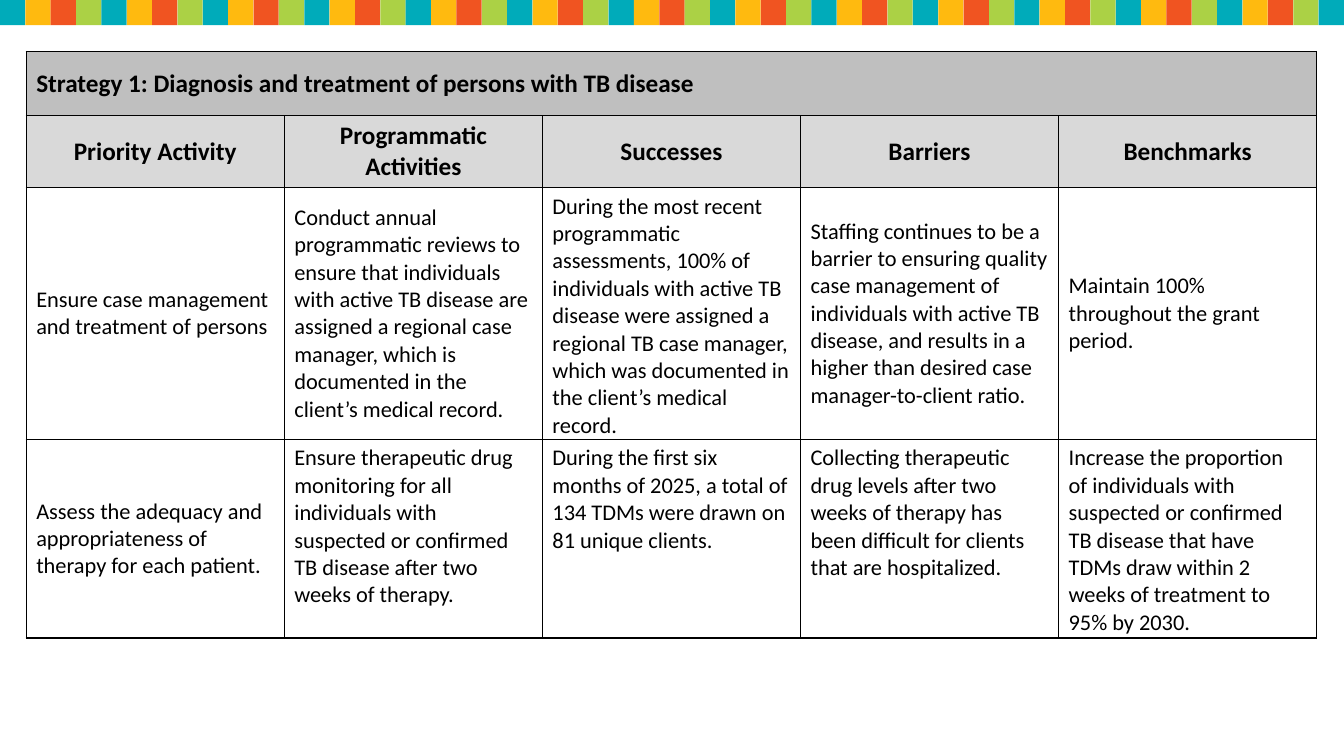
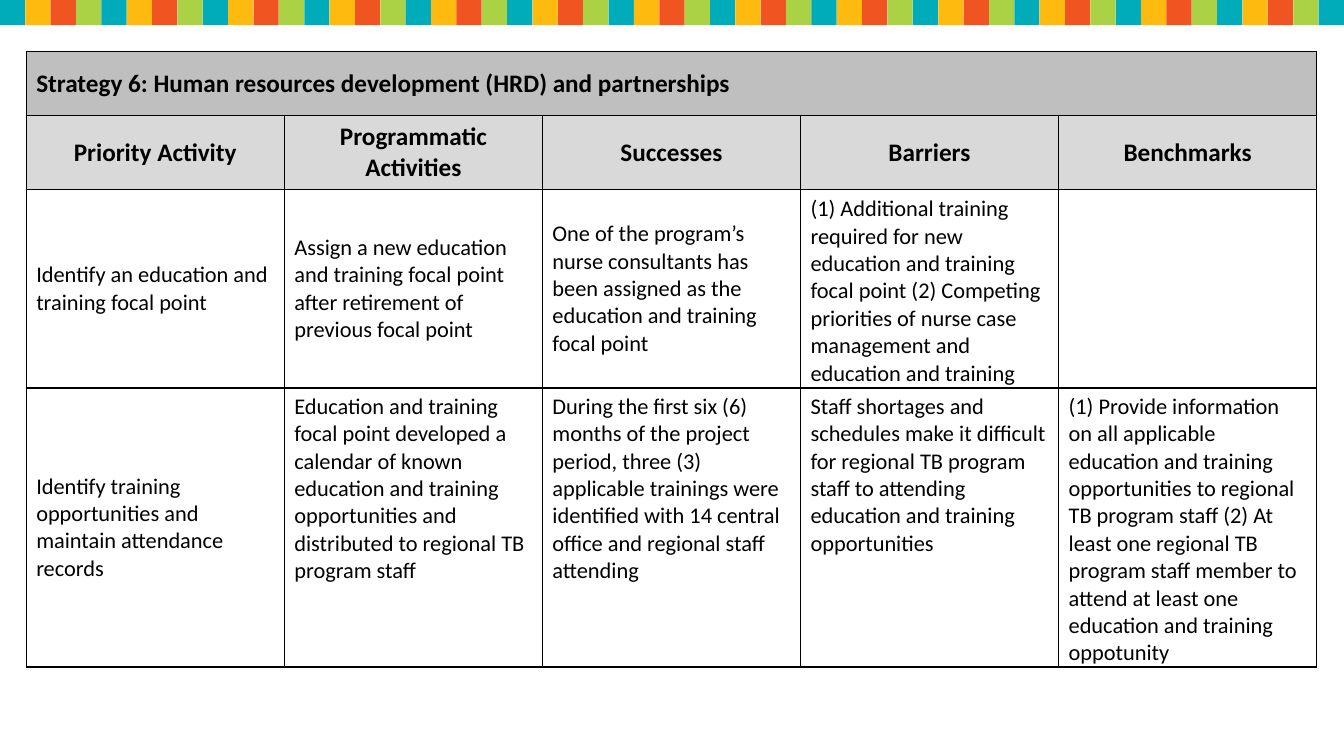
"""Build two TB strategy table slides under a shared coloured band."""
from itertools import cycle, islice

from lxml.etree import SubElement
from pptx import Presentation
from pptx.dml.color import RGBColor
from pptx.enum.shapes import MSO_SHAPE
from pptx.enum.text import MSO_ANCHOR, PP_ALIGN
from pptx.oxml.ns import qn
from pptx.util import Inches, Pt

COLORS = {
    "teal": "00ABBA", "amber": "FFBA0F", "orange": "F05421", "lime": "ABD145",
    "title": "BFBFBF", "header": "D9D9D9", "ink": "000000",
}
BAND_COLORS = ("teal", "amber", "orange", "lime")
BAND_COUNT = 53
FONT = "Calibri"
SLIDE_WIDTH, SLIDE_HEIGHT = 13.33, 7.5
TABLE_LEFT, TABLE_TOP, COLUMN_WIDTH = 0.26, 0.51, 2.56

HEADINGS = ("Priority Activity", "Programmatic Activities", "Successes", "Barriers", "Benchmarks")
STRATEGIES = [
    {
        "title": "Strategy 1: Diagnosis and treatment of persons with TB disease",
        "heights": (0.64, 0.71, 2.5, 1.97),
        "activities": [
            (
                "Ensure case management and treatment of persons",
                "Conduct annual programmatic reviews to ensure that individuals with active TB "
                "disease are assigned a regional case manager, which is documented in the "
                "client’s medical record.",
                "During the most recent programmatic assessments, 100% of individuals with "
                "active TB disease were assigned a regional TB case manager, which was "
                "documented in the client’s medical record.",
                "Staffing continues to be a barrier to ensuring quality case management of "
                "individuals with active TB disease, and results in a higher than desired case "
                "manager-to-client ratio.",
                "Maintain 100% throughout the grant period.",
            ),
            (
                "Assess the adequacy and appropriateness of therapy for each patient.",
                "Ensure therapeutic drug monitoring for all individuals with suspected or "
                "confirmed TB disease after two weeks of therapy.",
                "During the first six months of 2025, a total of 134 TDMs were drawn on 81 "
                "unique clients.",
                "Collecting therapeutic drug levels after two weeks of therapy has been "
                "difficult for clients that are hospitalized.",
                "Increase the proportion of individuals with suspected or confirmed TB disease "
                "that have TDMs draw within 2 weeks of treatment to 95% by 2030.",
            ),
        ],
    },
    {
        "title": "Strategy 6: Human resources development (HRD) and partnerships",
        "heights": (0.64, 0.73, 1.97, 2.76),
        "activities": [
            (
                "Identify an education and training focal point",
                "Assign a new education and training focal point after retirement of previous "
                "focal point",
                "One of the program’s nurse consultants has been assigned as the education and "
                "training focal point",
                "(1) Additional training required for new education and training focal point "
                "(2) Competing priorities of nurse case management and education and training",
                "",
            ),
            (
                "Identify training opportunities and maintain attendance records",
                "Education and training focal point developed a calendar of known education and "
                "training opportunities and distributed to regional TB program staff",
                "During the first six (6) months of the project period, three (3) applicable "
                "trainings were identified with 14 central office and regional staff attending",
                "Staff shortages and schedules make it difficult for regional TB program staff "
                "to attending education and training opportunities",
                "(1) Provide information on all applicable education and training opportunities "
                "to regional TB program staff (2) At least one regional TB program staff member "
                "to attend at least one education and training oppotunity",
            ),
        ],
    },
]


def rgb(name):
    return RGBColor.from_string(COLORS[name])


def add_band(prs, slide):
    band = slide.shapes.add_group_shape()
    pitch = SLIDE_WIDTH / BAND_COUNT
    for index, color in enumerate(islice(cycle(BAND_COLORS), BAND_COUNT)):
        square = band.shapes.add_shape(
            MSO_SHAPE.RECTANGLE, Inches(index * pitch), 0, Inches(0.25), Inches(0.25))
        square.shadow.inherit = False
        square.fill.solid()
        square.fill.fore_color.rgb = rgb(color)
        square.line.fill.background()
    prs.slide_master.shapes.element.append(band.element)


def add_borders(cell):
    properties = cell._tc.get_or_add_tcPr()
    for position, side in enumerate(("lnL", "lnR", "lnT", "lnB")):
        line = SubElement(properties, qn(f"a:{side}"), w=str(Pt(1)))
        SubElement(SubElement(line, qn("a:solidFill")), qn("a:srgbClr"), val=COLORS["ink"])
        properties.insert(position, line)


def style_cell(cell, text, size, bold=False, fill=None, align=PP_ALIGN.LEFT,
               anchor=MSO_ANCHOR.MIDDLE):
    cell.text = text
    cell.vertical_anchor = anchor
    if fill:
        cell.fill.solid()
        cell.fill.fore_color.rgb = rgb(fill)
    else:
        cell.fill.background()
    paragraph = cell.text_frame.paragraphs[0]
    paragraph.alignment = align
    font = paragraph.font
    font.name, font.size, font.bold = FONT, Pt(size), bold
    font.color.rgb = rgb("ink")
    add_borders(cell)


def add_strategy(slide, strategy):
    heights = strategy["heights"]
    table = slide.shapes.add_table(
        len(heights), len(HEADINGS), Inches(TABLE_LEFT), Inches(TABLE_TOP),
        Inches(COLUMN_WIDTH * len(HEADINGS)), Inches(sum(heights))).table
    table.first_row = table.horz_banding = False
    for column in table.columns:
        column.width = Inches(COLUMN_WIDTH)
    for row, height in zip(table.rows, heights):
        row.height = Inches(height)

    for index, heading in enumerate(HEADINGS):
        title = strategy["title"] if index == 0 else ""
        style_cell(table.cell(0, index), title, 18, True, "title")
        style_cell(table.cell(1, index), heading, 18, True, "header", PP_ALIGN.CENTER)
    table.cell(0, 0).merge(table.cell(0, len(HEADINGS) - 1))

    for row_index, activity in enumerate(strategy["activities"], start=2):
        longest = max(activity, key=len)
        last_row = row_index == len(heights) - 1
        for index, text in enumerate(activity):
            cell = table.cell(row_index, index)
            anchor = MSO_ANCHOR.TOP if last_row and index else MSO_ANCHOR.MIDDLE
            style_cell(cell, text, 16, anchor=anchor)
            if text == longest:
                cell.margin_bottom = 0


def main():
    prs = Presentation()
    prs.slide_width, prs.slide_height = Inches(SLIDE_WIDTH), Inches(SLIDE_HEIGHT)
    blank = prs.slide_layouts[6]
    slides = [prs.slides.add_slide(blank) for _ in STRATEGIES]
    add_band(prs, slides[0])
    for slide, strategy in zip(slides, STRATEGIES):
        add_strategy(slide, strategy)
    prs.save("out.pptx")


if __name__ == "__main__":
    main()
